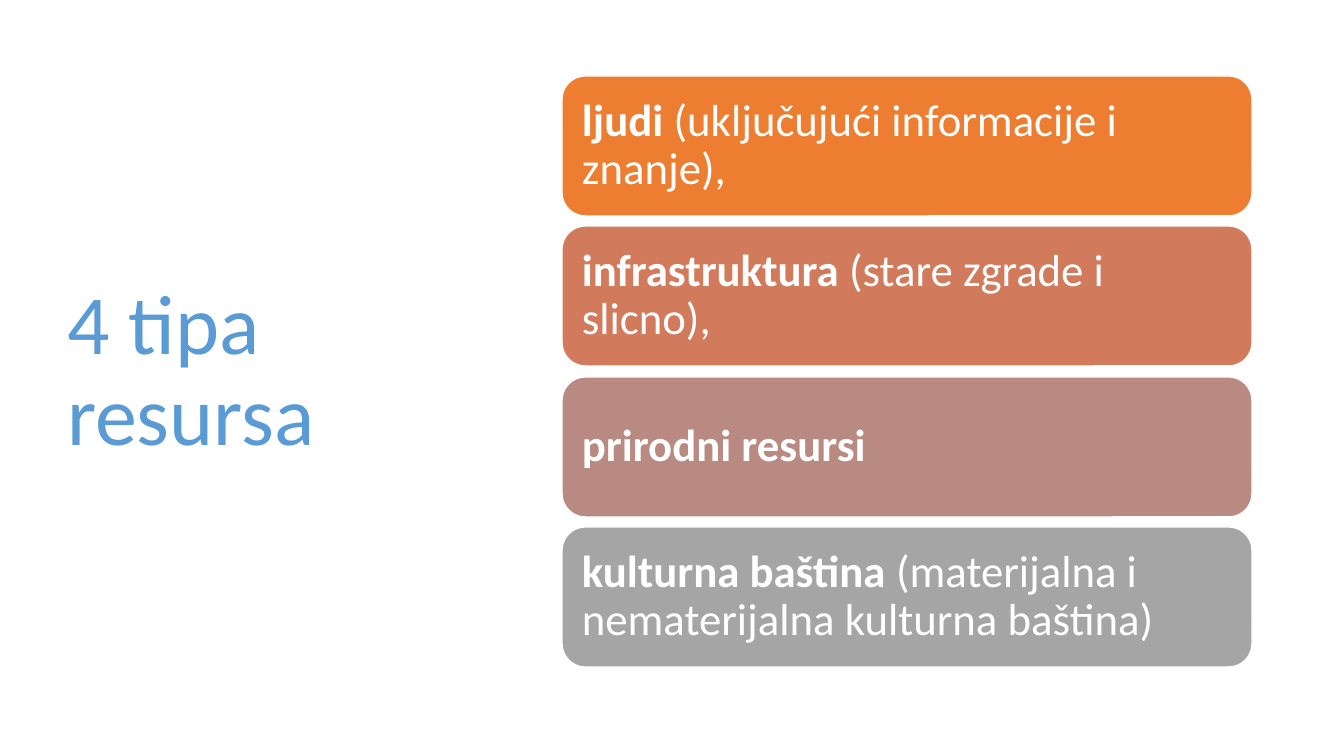
from pptx import Presentation
from pptx.dml.color import RGBColor
from pptx.enum.shapes import MSO_SHAPE
from pptx.enum.text import MSO_ANCHOR, MSO_AUTO_SIZE, PP_ALIGN
from pptx.util import Pt

PX = 914400 / 100.8  # EMU per px
COLORS = {
    "title": "5B9BD5",
    "white": "FFFFFF",
    "people": "ED7D31",
    "infrastructure": "D17B5C",
    "nature": "B98A82",
    "heritage": "A5A5A5",
}
RESOURCES = [
    ("people", "ljudi ", "(uključujući informacije i znanje),"),
    ("infrastructure", "infrastruktura", " (stare zgrade i slicno),"),
    ("nature", "prirodni resursi", ""),
    ("heritage", "kulturna baština ", "(materijalna i nematerijalna kulturna baština)"),
]
CARD_LEFT, CARD_WIDTH, CARD_HEIGHT = 562, 690, 140
FIRST_TOP, LAST_TOP = 76, 527
CARD_INSET = 13


def px(length):
    return round(length * PX)


def color(name):
    return RGBColor.from_string(COLORS[name])


prs = Presentation()
prs.slide_width, prs.slide_height = px(1344), px(756)
slide = prs.slides.add_slide(prs.slide_layouts[5])

# Title
title = slide.shapes.title
title.left, title.top, title.width, title.height = px(57), px(69), px(419), px(607)
heading = title.text_frame
heading.text = "4 tipa resursa"
heading.word_wrap = True
heading.auto_size = MSO_AUTO_SIZE.NONE
heading.vertical_anchor = MSO_ANCHOR.MIDDLE
heading_line = heading.paragraphs[0]
heading_line.alignment = PP_ALIGN.LEFT
heading_line.line_spacing = 0.9
heading_font = heading_line.runs[0].font
heading_font.name, heading_font.size = "Calibri", Pt(60)
heading_font.color.rgb = color("title")

# Resource cards, evenly spaced from first to last
pitch = (LAST_TOP - FIRST_TOP) / (len(RESOURCES) - 1)
for index, (fill, resource, detail) in enumerate(RESOURCES):
    card = slide.shapes.add_shape(
        MSO_SHAPE.ROUNDED_RECTANGLE,
        px(CARD_LEFT), px(round(FIRST_TOP + index * pitch)),
        px(CARD_WIDTH), px(CARD_HEIGHT))
    card.shadow.inherit = False
    card.fill.solid()
    card.fill.fore_color.rgb = color(fill)
    card.line.color.rgb = color("white")
    card.line.width = Pt(1)

    label = card.text_frame
    label.word_wrap = True
    label.vertical_anchor = MSO_ANCHOR.MIDDLE
    label.margin_left = label.margin_right = px(CARD_INSET)
    label.margin_top = label.margin_bottom = px(CARD_INSET)
    label_line = label.paragraphs[0]
    label_line.alignment = PP_ALIGN.LEFT
    label_line.line_spacing = 0.9
    for wording, bold in ((resource, True), (detail, False)):
        if wording:
            run = label_line.add_run()
            run.text = wording
            run.font.name, run.font.size = "Calibri", Pt(32)
            run.font.bold = bold
            run.font.color.rgb = color("white")

prs.save("out.pptx")
